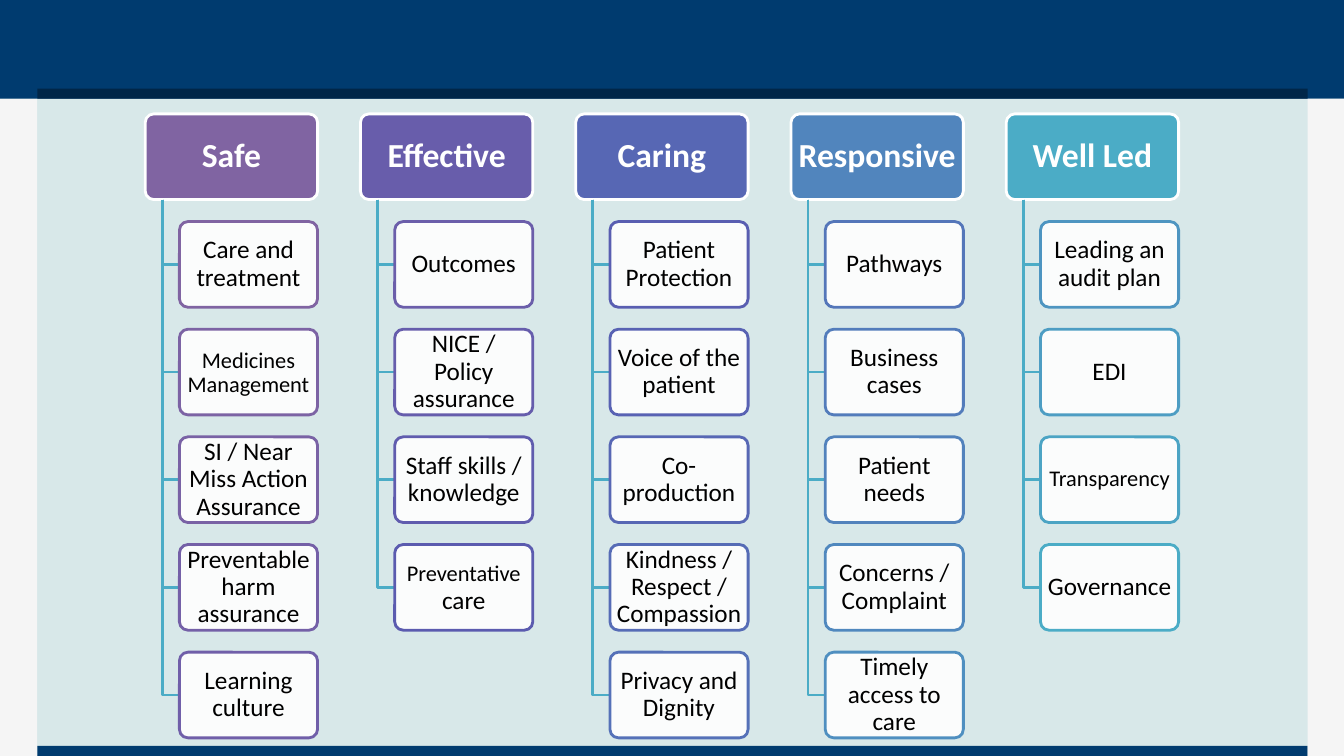
from colorsys import hls_to_rgb, rgb_to_hls

from lxml.etree import SubElement
from pptx import Presentation
from pptx.dml.color import RGBColor
from pptx.enum.shapes import MSO_SHAPE
from pptx.enum.text import MSO_ANCHOR, PP_ALIGN
from pptx.oxml.ns import qn
from pptx.util import Inches, Pt

BACKGROUND = RGBColor(0xD8, 0xE8, 0xE9)
NAVY = RGBColor(0x00, 0x3B, 0x6F)
DARK_NAVY = RGBColor(0x00, 0x26, 0x48)
SIDE_GREY = RGBColor(0xF5, 0xF5, 0xF5)
PURPLE = RGBColor(0x80, 0x64, 0xA2)
TEAL = RGBColor(0x4B, 0xAC, 0xC6)
WHITE = RGBColor(0xFF, 0xFF, 0xFF)
BLACK = RGBColor(0x00, 0x00, 0x00)

BANDS = [
    (0, 0.98, 0.37, 6.52, SIDE_GREY),
    (0, 0, 13.33, 0.98, NAVY),
    (0.37, 0.88, 12.6, 0.1, DARK_NAVY),
    (0.37, 7.4, 12.6, 0.1, NAVY),
    (12.97, 0.98, 0.37, 6.52, SIDE_GREY),
]

DOMAINS = [
    ("Safe", [
        [("Care and treatment", 18)],
        [("Medicines", 16), (" ", 18), ("Management", 16)],
        [("SI / Near Miss Action Assurance", 18)],
        [("Preventable harm assurance", 18)],
        [("Learning culture", 18)],
    ]),
    ("Effective", [
        [("Outcomes", 18)],
        [("NICE / Policy assurance", 18)],
        [("Staff skills / knowledge", 18)],
        [("Preventative", 16), (" care", 18)],
    ]),
    ("Caring", [
        [("Patient Protection", 18)],
        [("Voice of the patient", 18)],
        [("Co-production", 18)],
        [("Kindness / Respect / Compassion", 18)],
        [("Privacy and Dignity", 18)],
    ]),
    ("Responsive", [
        [("Pathways", 18)],
        [("Business cases", 18)],
        [("Patient needs", 18)],
        [("Concerns / Complaint", 18)],
        [("Timely access to care", 18)],
    ]),
    ("Well Led", [
        [("Leading an audit plan", 18)],
        [("EDI", 18)],
        [("Transparency", 16)],
        [("Governance", 18)],
    ]),
]

LEFT, TOP = 1.44, 1.13
HEADER_WIDTH, ITEM_WIDTH, BOX_HEIGHT = 1.71, 1.37, 0.85
COLUMN_STEP = 8.54 / 4
ROW_STEP = 5.34 / 5
STEM_OFFSET = 0.17
ITEM_OFFSET = 0.34


def blend_colour(share):
    start, end = (rgb_to_hls(*(part / 255 for part in colour)) for colour in (PURPLE, TEAL))
    mixed = [first + (last - first) * share for first, last in zip(start, end)]
    return RGBColor(*(round(part * 255) for part in hls_to_rgb(*mixed)))


def add_box(left, top, width, fill_colour, line_colour, text_colour, runs, side_margin):
    shape = slide.shapes.add_shape(
        MSO_SHAPE.ROUNDED_RECTANGLE, Inches(left), Inches(top), Inches(width), Inches(BOX_HEIGHT))
    shape.adjustments[0] = 0.1
    shape.shadow.inherit = False
    shape.fill.solid()
    shape.fill.fore_color.rgb = fill_colour
    shape.line.color.rgb = line_colour
    shape.line.width = Pt(2)
    frame = shape.text_frame
    frame.word_wrap = True
    frame.vertical_anchor = MSO_ANCHOR.MIDDLE
    frame.margin_left = frame.margin_right = Inches(side_margin)
    frame.margin_top = frame.margin_bottom = Inches(0.03)
    paragraph = frame.paragraphs[0]
    paragraph.alignment = PP_ALIGN.CENTER
    paragraph.line_spacing = 0.9
    for text, size in runs:
        run = paragraph.add_run()
        run.text = text
        run.font.name = "Calibri"
        run.font.size = Pt(size)
        run.font.color.rgb = text_colour
    return shape


presentation = Presentation()
presentation.slide_width = Inches(13.33)
presentation.slide_height = Inches(7.5)
slide = presentation.slides.add_slide(presentation.slide_layouts[6])
slide.background.fill.solid()
slide.background.fill.fore_color.rgb = BACKGROUND

for left, top, width, height, colour in BANDS:
    band = slide.shapes.add_shape(
        MSO_SHAPE.RECTANGLE, Inches(left), Inches(top), Inches(width), Inches(height))
    band.shadow.inherit = False
    band.fill.solid()
    band.fill.fore_color.rgb = colour
    band.line.fill.background()

item_count = sum(len(items) for _, items in DOMAINS)
item_index = 0
for column, (domain, items) in enumerate(DOMAINS):
    left = LEFT + column * COLUMN_STEP
    header_colour = blend_colour(column / (len(DOMAINS) - 1))
    header = add_box(left, TOP, HEADER_WIDTH, header_colour, WHITE, WHITE, [(domain, 24)], 0.05)
    header.text_frame.paragraphs[0].runs[0].font.bold = True

    stem_left = Inches(left + STEM_OFFSET)
    item_left = left + ITEM_OFFSET
    for row, runs in enumerate(items, start=1):
        item_top = TOP + row * ROW_STEP
        item_middle = Inches(item_top + BOX_HEIGHT / 2)
        builder = slide.shapes.build_freeform(stem_left, Inches(TOP + BOX_HEIGHT))
        builder.add_line_segments(
            [(stem_left, item_middle), (Inches(item_left), item_middle)], close=False)
        branch = builder.convert_to_shape()
        branch.shadow.inherit = False
        branch.fill.background()
        branch.line.color.rgb = TEAL
        branch.line.width = Pt(2)

        line_colour = blend_colour(item_index / (item_count - 1))
        item = add_box(item_left, item_top, ITEM_WIDTH, WHITE, line_colour, BLACK, runs, 0.04)
        fill_element = item.fill._xPr.find(qn("a:solidFill"))
        SubElement(fill_element[0], qn("a:alpha"), val="90000")
        item_index += 1

presentation.save("out.pptx")
